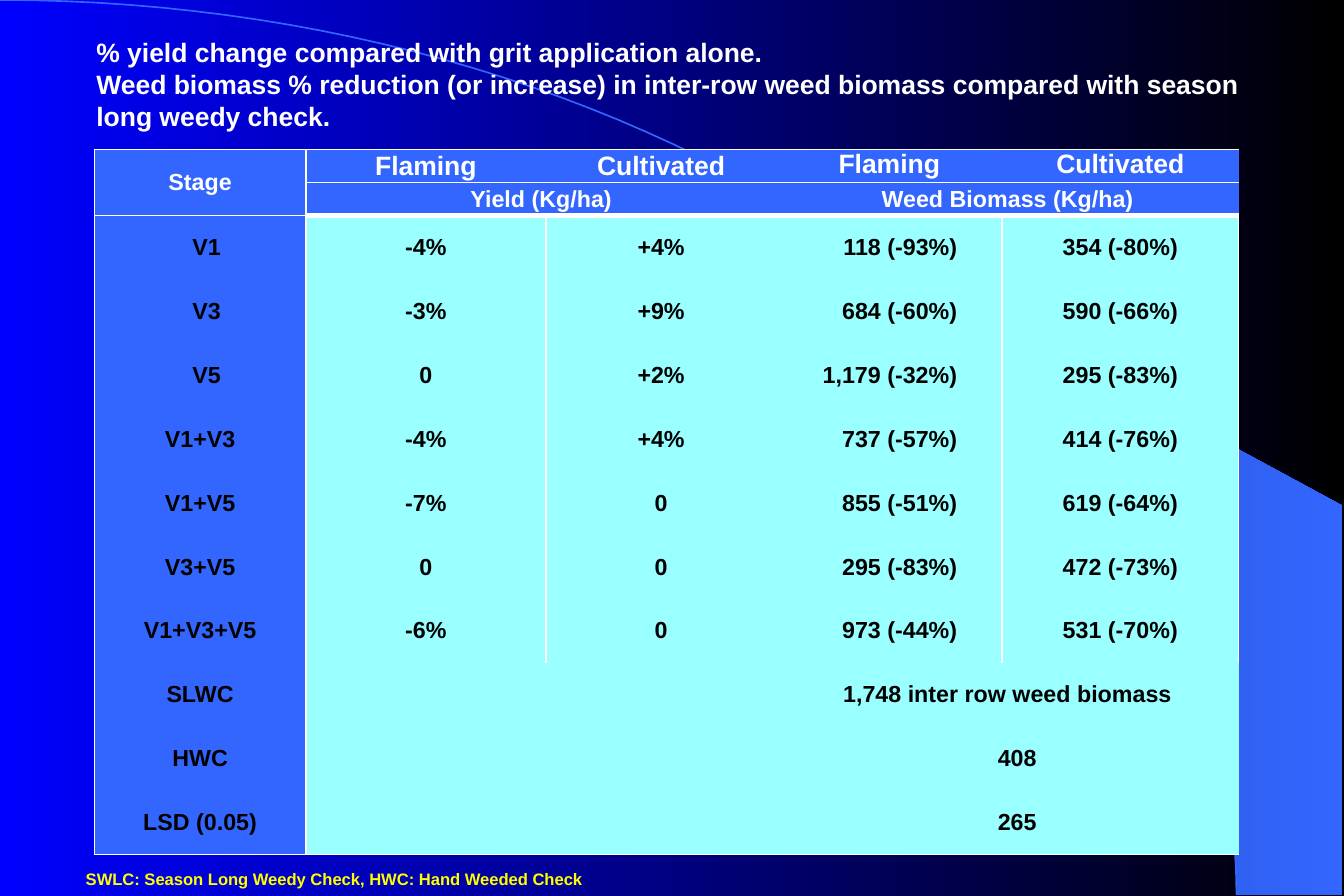
from dataclasses import dataclass
from math import cos, radians, sin

from lxml import etree
from pptx import Presentation
from pptx.dml.color import RGBColor
from pptx.enum.text import MSO_ANCHOR, PP_ALIGN
from pptx.oxml.ns import qn
from pptx.util import Pt

TOP, MIDDLE = MSO_ANCHOR.TOP, MSO_ANCHOR.MIDDLE
LEFT, CENTER, RIGHT = PP_ALIGN.LEFT, PP_ALIGN.CENTER, PP_ALIGN.RIGHT


@dataclass(frozen=True)
class Theme:
    """Colours, font and type sizes of the slide."""
    font: str = "Arial"
    white: str = "FFFFFF"
    black: str = "000000"
    deep: str = "0000FF"
    shade: str = "2449B6"
    blue: str = "3366FF"
    aqua: str = "99FFFF"
    yellow: str = "FFFF00"
    title: int = 16
    body: int = 14
    note: int = 10


THEME = Theme()
TITLE = [
    "% yield change compared with grit application alone.",
    "Weed biomass % reduction (or increase) in inter-row weed biomass "
    "compared with season long weedy check.",
]
NOTE = "SWLC: Season Long Weedy Check, HWC: Hand Weeded Check"
ROWS = [
    ["Stage", "Flaming", "Cultivated", "Flaming", "Cultivated"],
    ["", "Yield (Kg/ha)", "", "Weed Biomass (Kg/ha)", ""],
    ["V1", "-4%", "+4%", "118 (-93%)", "354 (-80%)"],
    ["V3", "-3%", "+9%", "684 (-60%)", "590 (-66%)"],
    ["V5", "0", "+2%", "1,179 (-32%)", "295 (-83%)"],
    ["V1+V3", "-4%", "+4%", "737 (-57%)", "414 (-76%)"],
    ["V1+V5", "-7%", "0", "855 (-51%)", "619 (-64%)"],
    ["V3+V5", "0", "0", "295 (-83%)", "472 (-73%)"],
    ["V1+V3+V5", "-6%", "0", "973 (-44%)", "531 (-70%)"],
    ["SLWC", "", "", "1,748 inter row weed biomass", ""],
    ["HWC", "", "", "408", ""],
    ["LSD (0.05)", "", "", "265", ""],
]
WIDTHS = [127.5, 144.6, 139, 136, 142.6]
HEAD, BODY = 20, 38.5
FIRST, CHECKS = 2, 9
PAD, INDENT, INSET = 5, 11.7, 27


def rgb(code):
    """Turn a hex code into a colour."""
    return RGBColor.from_string(code)


def blend(fill, start, end):
    """Give a fill a gradient from left to right."""
    fill.gradient()
    fill.gradient_angle = 0
    for stop, code in zip(fill.gradient_stops, (start, end)):
        stop.color.rgb = rgb(code)


def style(para, size, color, align):
    """Format a paragraph and its runs."""
    para.alignment = align
    for run in para.runs:
        run.font.name = THEME.font
        run.font.size = Pt(size)
        run.font.bold = True
        run.font.color.rgb = rgb(color)


def arc(start, end, steps=60):
    """List points on the large ellipse between two angles."""
    turns = [radians(start + (end - start) * i / steps) for i in range(steps + 1)]
    return [(745.2 * sin(t), 539.2 * (1 - cos(t))) for t in turns]


def draw(slide, points, close):
    """Add an outline through the points."""
    spots = [(Pt(x), Pt(y)) for x, y in points]
    pen = slide.shapes.build_freeform(*spots[0], scale=1.0)
    pen.add_line_segments(spots[1:], close=close)
    shape = pen.convert_to_shape()
    shape.shadow.inherit = False
    return shape


def add_decor(slide):
    """Add the fan and the sweeping curve."""
    fan = draw(slide, arc(39.8, 90) + [(808.6, 539.2), (808.6, 304.6)], True)
    blend(fan.fill, THEME.shade, THEME.blue)
    fan.line.fill.background()
    curve = draw(slide, arc(0, 90), False)
    curve.fill.background()
    curve.line.color.rgb = rgb(THEME.blue)
    curve.line.width = Pt(1)


def add_text(slide, box, lines, size, color, anchor):
    """Add a wrapped text box and return its frame."""
    frame = slide.shapes.add_textbox(*map(Pt, box)).text_frame
    frame.word_wrap = True
    frame.vertical_anchor = anchor
    frame.text = "\n".join(lines)
    for para in frame.paragraphs:
        style(para, size, color, LEFT)
    return frame


def edges(row, col):
    """Give the border widths of a cell by side."""
    data = FIRST <= row < CHECKS
    rule = 3 if col else 1
    return {
        "L": int(col < 2 or (data and col in (2, 4))),
        "R": int(col == 0 or (data and col != 2)),
        "T": 1 if row < FIRST else rule * (row == FIRST),
        "B": rule if row == 1 else int(row in (0, len(ROWS) - 1)),
    }


def set_edges(cell, widths):
    """Draw the borders of a cell."""
    props = cell._tc.get_or_add_tcPr()
    for side, width in widths.items():
        line = etree.SubElement(props, qn("a:ln" + side), w=str(Pt(width)))
        if width:
            fill = etree.SubElement(line, qn("a:solidFill"))
            etree.SubElement(fill, qn("a:srgbClr"), val=THEME.white)
        else:
            etree.SubElement(line, qn("a:noFill"))


def fill_cell(cell, row, col):
    """Set the text, borders and fill of one cell."""
    head, data = row < FIRST, FIRST <= row < CHECKS
    amount = data and col == 3
    left = PAD
    if col == 0 and FIRST <= row < FIRST + 3:
        left += INDENT * 2 / 3
    elif col == 3 and row > CHECKS:
        left += INDENT
    cell.margin_left = Pt(left)
    cell.margin_right = Pt(INSET if amount else PAD)
    cell.margin_top = cell.margin_bottom = 0
    cell.vertical_anchor = TOP if row == 0 and col > 2 else MIDDLE
    cell.text = ROWS[row][col]
    size = THEME.title if row == 0 and col else THEME.body
    color = THEME.white if head else THEME.black
    style(cell.text_frame.paragraphs[0], size, color, RIGHT if amount else CENTER)
    set_edges(cell, edges(row, col))
    cell.fill.solid()
    cell.fill.fore_color.rgb = rgb(THEME.blue if head or col == 0 else THEME.aqua)


def add_grid(slide):
    """Add the table of yield and weed biomass."""
    tall = [HEAD if row < FIRST else BODY for row in range(len(ROWS))]
    box = map(Pt, (56.9, 90, sum(WIDTHS), sum(tall)))
    table = slide.shapes.add_table(len(ROWS), len(WIDTHS), *box).table
    table.first_row = table.horz_banding = False
    for col, width in zip(table.columns, WIDTHS):
        col.width = Pt(width)
    for row, height in zip(table.rows, tall):
        row.height = Pt(height)
    for row in range(len(ROWS)):
        for col in range(len(WIDTHS)):
            fill_cell(table.cell(row, col), row, col)
    table.cell(0, 0).merge(table.cell(1, 0))
    for row in (1, *range(CHECKS, len(ROWS))):
        for col in (1, 3):
            table.cell(row, col).merge(table.cell(row, col + 1))


def main():
    """Build and save the slide."""
    deck = Presentation()
    deck.slide_width, deck.slide_height = Pt(810), Pt(540)
    slide = deck.slides.add_slide(deck.slide_layouts[6])
    blend(slide.background.fill, THEME.deep, THEME.black)
    add_decor(slide)
    add_grid(slide)
    add_text(slide, (51, 18, 738, 65.5), TITLE, THEME.title, THEME.white, MIDDLE)
    note = add_text(slide, (44.6, 516.2, 738, 23.8), [NOTE], THEME.note, THEME.yellow, TOP)
    note.paragraphs[0].line_spacing = Pt(16)
    deck.save("out.pptx")


if __name__ == "__main__":
    main()
